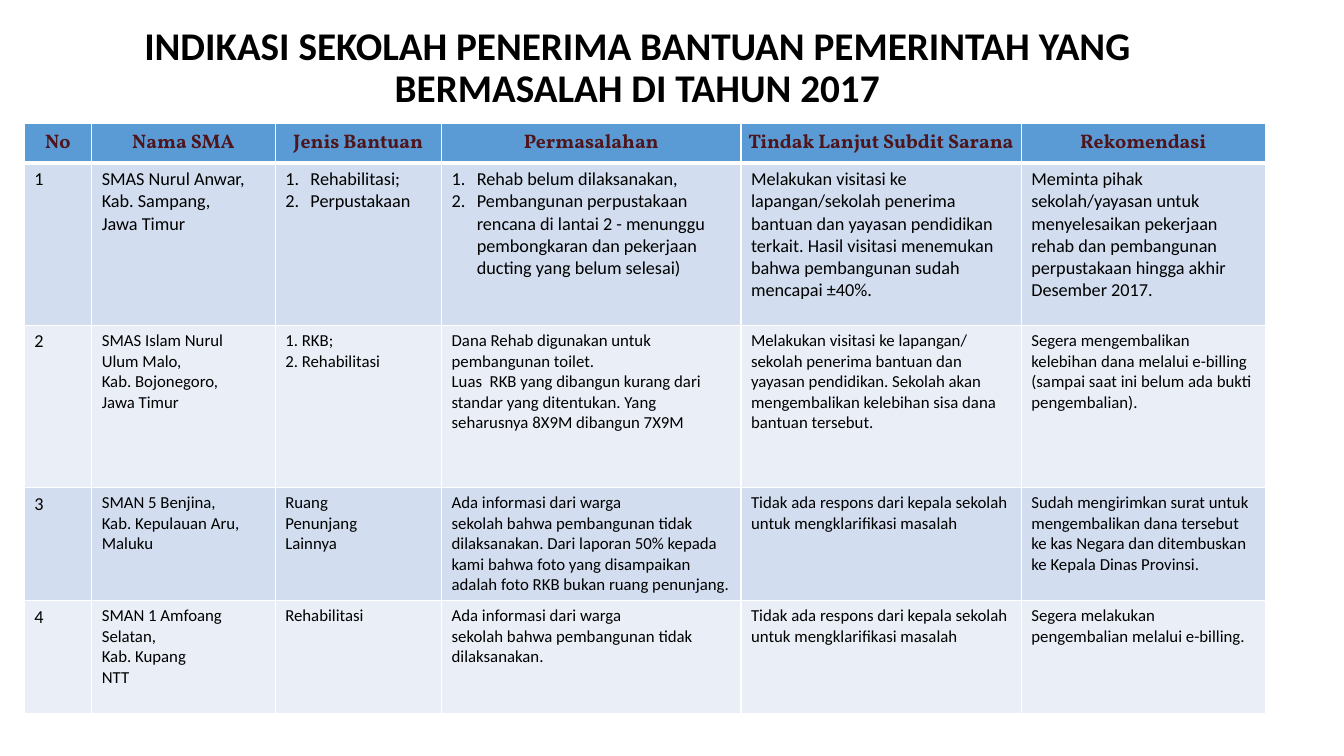
from dataclasses import dataclass

from lxml import etree
from pptx import Presentation
from pptx.dml.color import RGBColor
from pptx.enum.text import MSO_ANCHOR, PP_ALIGN
from pptx.oxml.ns import qn
from pptx.util import Emu, Pt

CENTER = PP_ALIGN.CENTER
LEFT = PP_ALIGN.LEFT
MIDDLE = MSO_ANCHOR.MIDDLE
TOP = MSO_ANCHOR.TOP
BOTTOM = MSO_ANCHOR.BOTTOM

EMU_PER_PX = 9144  # 100 px to the inch
COLUMN_WIDTHS = [67, 182, 165, 297, 278, 242]
HEADER_HEIGHT = 40
BLACK, WHITE, MAROON = "000000", "FFFFFF", "50141B"
HEADER_FILL = "5B9BD5"
BAND_FILLS = ["D2DEEF", "EAEFF7"]
NUMBER_SIZE = 13
THIN, THICK = 1, 3

TITLE = "INDIKASI SEKOLAH PENERIMA BANTUAN PEMERINTAH YANG BERMASALAH DI TAHUN 2017"
HEADINGS = ["No", "Nama SMA", "Jenis Bantuan", "Permasalahan",
            "Tindak Lanjut Subdit Sarana", "Rekomendasi"]
NO_RESPONSE = "Tidak ada respons dari kepala sekolah untuk mengklarifikasi masalah"


@dataclass(frozen=True)
class TextStyle:
    size: int
    color: str = BLACK
    font: str = "Calibri"
    bold: bool = False
    align: PP_ALIGN = LEFT


@dataclass(frozen=True)
class SchoolCase:
    """One table row; each list holds the paragraphs of a cell."""
    school: list[str]
    aid: list[str]
    problem: list[str]
    follow_up: str
    recommendation: str
    height: int
    size: int = 12
    numbered: bool = False


CASES = [
    SchoolCase(
        ["SMAS Nurul Anwar,", "Kab. Sampang,", "Jawa Timur"],
        ["Rehabilitasi;", "Perpustakaan"],
        ["Rehab belum dilaksanakan,",
         "Pembangunan perpustakaan rencana di lantai 2 - menunggu "
         "pembongkaran dan pekerjaan ducting yang belum selesai)"],
        "Melakukan visitasi ke lapangan/sekolah penerima bantuan dan yayasan "
        "pendidikan terkait. Hasil visitasi menemukan bahwa pembangunan sudah "
        "mencapai ±40%.",
        "Meminta pihak sekolah/yayasan untuk menyelesaikan pekerjaan rehab dan "
        "pembangunan perpustakaan hingga akhir Desember 2017.",
        height=161, size=13, numbered=True),
    SchoolCase(
        ["SMAS Islam Nurul", "Ulum Malo,", "Kab. Bojonegoro,", "Jawa Timur"],
        ["1. RKB;", "2. Rehabilitasi"],
        ["Dana Rehab digunakan untuk pembangunan toilet.",
         "Luas  RKB yang dibangun kurang dari standar yang ditentukan. "
         "Yang seharusnya 8X9M dibangun 7X9M"],
        "Melakukan visitasi ke lapangan/ sekolah penerima bantuan dan yayasan "
        "pendidikan. Sekolah akan mengembalikan kelebihan sisa dana bantuan "
        "tersebut.",
        "Segera mengembalikan kelebihan dana melalui e-billing (sampai saat ini "
        "belum ada bukti pengembalian).",
        height=161),
    SchoolCase(
        ["SMAN 5 Benjina,", "Kab. Kepulauan Aru,", "Maluku"],
        ["Ruang", "Penunjang", "Lainnya"],
        ["Ada informasi dari warga", "sekolah bahwa pembangunan tidak",
         "dilaksanakan. Dari laporan 50% kepada kami bahwa foto yang "
         "disampaikan adalah foto RKB bukan ruang penunjang."],
        NO_RESPONSE,
        "Sudah mengirimkan surat untuk mengembalikan dana tersebut ke kas "
        "Negara dan ditembuskan ke Kepala Dinas Provinsi.",
        height=112),
    SchoolCase(
        ["SMAN 1 Amfoang", "Selatan,", "Kab. Kupang", "NTT"],
        ["Rehabilitasi"],
        ["Ada informasi dari warga",
         "sekolah bahwa pembangunan tidak dilaksanakan."],
        NO_RESPONSE,
        "Segera melakukan pengembalian melalui e-billing.",
        height=112),
]


def px(length: int) -> Emu:
    return Emu(length * EMU_PER_PX)


def rgb(color: str) -> RGBColor:
    return RGBColor.from_string(color)


def number_paragraph(paragraph) -> None:
    """Give the paragraph automatic 1. 2. numbering with a hanging indent."""
    properties = paragraph._p.get_or_add_pPr()
    properties.set("marL", str(px(25)))
    properties.set("indent", str(px(-25)))
    etree.SubElement(properties, qn("a:buFont"), typeface="+mj-lt")
    etree.SubElement(properties, qn("a:buAutoNum"), type="arabicPeriod")


def write_text(frame, lines: list[str], style: TextStyle, numbered: bool = False) -> None:
    for index, line in enumerate(lines):
        paragraph = frame.add_paragraph() if index else frame.paragraphs[0]
        if numbered:
            number_paragraph(paragraph)
        paragraph.alignment = style.align
        run = paragraph.add_run()
        run.text = line
        run.font.name = style.font
        run.font.size = Pt(style.size)
        run.font.bold = style.bold
        run.font.color.rgb = rgb(style.color)


def format_cell(cell, fill: str, top: int = THIN, bottom: int = THIN) -> None:
    """Set the white borders (widths in points) and the fill."""
    properties = cell._tc.get_or_add_tcPr()
    for side, width in (("L", THIN), ("R", THIN), ("T", top), ("B", bottom)):
        border = etree.SubElement(properties, qn(f"a:ln{side}"), w=str(Pt(width)))
        border_fill = etree.SubElement(border, qn("a:solidFill"))
        etree.SubElement(border_fill, qn("a:srgbClr"), val=WHITE)
    cell.fill.solid()
    cell.fill.fore_color.rgb = rgb(fill)


def add_title(slide) -> None:
    frame = slide.shapes.add_textbox(px(132), px(14), px(1000), px(101)).text_frame
    frame.word_wrap = True
    frame.vertical_anchor = BOTTOM
    write_text(frame, [TITLE], TextStyle(28, bold=True, align=CENTER))
    frame.paragraphs[0].line_spacing = 0.9


def fill_header(table) -> None:
    style = TextStyle(14, MAROON, "Vollkorn", bold=True, align=CENTER)
    for column, heading in enumerate(HEADINGS):
        cell = table.cell(0, column)
        format_cell(cell, HEADER_FILL, bottom=THICK)
        cell.margin_left = cell.margin_right = 0
        cell.margin_top = cell.margin_bottom = 0
        cell.vertical_anchor = MIDDLE
        write_text(cell.text_frame, [heading], style)


def fill_case(table, number: int, case: SchoolCase) -> None:
    contents = [[str(number)], case.school, case.aid, case.problem,
                [case.follow_up], [case.recommendation]]
    for column, lines in enumerate(contents):
        cell = table.cell(number, column)
        format_cell(cell, BAND_FILLS[(number - 1) % 2],
                    top=THICK if number == 1 else THIN)
        cell.vertical_anchor = TOP
        style = TextStyle(case.size if column else NUMBER_SIZE)
        write_text(cell.text_frame, lines, style,
                   numbered=case.numbered and len(lines) == 2)


def add_case_table(slide) -> None:
    heights = [HEADER_HEIGHT] + [case.height for case in CASES]
    table = slide.shapes.add_table(
        len(heights), len(COLUMN_WIDTHS), px(24), px(122),
        px(sum(COLUMN_WIDTHS)), px(sum(heights))).table
    table.first_row = table.horz_banding = False
    for column, width in zip(table.columns, COLUMN_WIDTHS):
        column.width = px(width)
    for row, height in zip(table.rows, heights):
        row.height = px(height)
    fill_header(table)
    for number, case in enumerate(CASES, start=1):
        fill_case(table, number, case)


def main() -> None:
    presentation = Presentation()
    presentation.slide_width, presentation.slide_height = px(1333), px(750)
    slide = presentation.slides.add_slide(presentation.slide_layouts[6])
    add_title(slide)
    add_case_table(slide)
    presentation.save("out.pptx")


if __name__ == "__main__":
    main()
